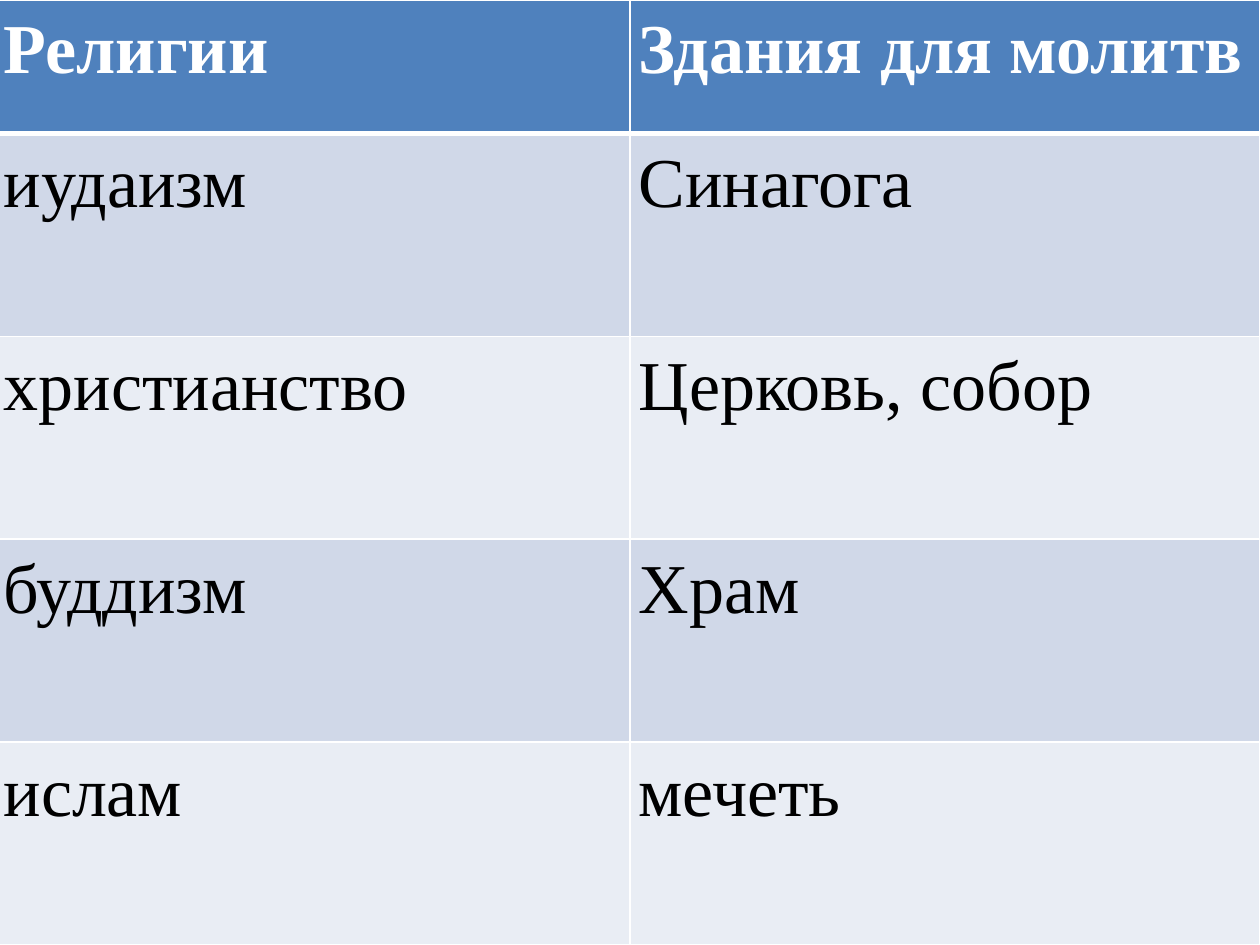
from lxml import etree
from pptx import Presentation
from pptx.dml.color import RGBColor
from pptx.oxml.ns import qn
from pptx.util import Inches, Pt

ROWS = [
    ("Религии", "Здания для молитв"),
    ("иудаизм", "Синагога"),
    ("христианство", "Церковь, собор"),
    ("буддизм", "Храм"),
    ("ислам", "мечеть"),
]
COLORS = {"head": "4F81BD", "odd": "D0D8E8", "even": "E9EDF4",
          "white": "FFFFFF", "black": "000000"}
WIDE, HIGH = 10, 7.5
BLEED = 0.04
COLS = [WIDE / 2 + BLEED, WIDE / 2]
HEAD = 1.06
BODY = (HIGH - HEAD) / (len(ROWS) - 1)
PAD = 0.07
THIN, THICK = 1, 3


def put_text(cell, text, size=40, bold=False, color="black"):
    cell.margin_left = cell.margin_right = Inches(PAD)
    cell.margin_top = cell.margin_bottom = 0
    para = cell.text_frame.paragraphs[0]
    para.line_spacing = 1.15
    para.space_after = Pt(10)
    run = para.add_run()
    run.text = text
    font = run.font
    font.name = "Times New Roman"
    font.size = Pt(size)
    font.bold = bold
    font.color.rgb = RGBColor.from_string(COLORS[color])


def edge(cell, **sides):
    props = cell._tc.get_or_add_tcPr()
    for side, width in sides.items():
        line = etree.SubElement(props, qn("a:ln" + side), w=str(Pt(width)))
        fill = etree.SubElement(line, qn("a:solidFill"))
        etree.SubElement(fill, qn("a:srgbClr"), val=COLORS["white"])


def main():
    deck = Presentation()
    deck.slide_width, deck.slide_height = Inches(WIDE), Inches(HIGH)
    slide = deck.slides.add_slide(deck.slide_layouts[6])
    frame = slide.shapes.add_table(
        len(ROWS), len(COLS), Inches(-BLEED), 0,
        Inches(sum(COLS)), Inches(HIGH))
    table = frame.table
    for col, width in zip(table.columns, COLS):
        col.width = Inches(width)
    for r, texts in enumerate(ROWS):
        head = r == 0
        table.rows[r].height = Inches(HEAD if head else BODY)
        tone = "head" if head else "odd" if r % 2 else "even"
        for c, text in enumerate(texts):
            cell = table.cell(r, c)
            put_text(cell, text, bold=head, color="white" if head else "black")
            edge(cell, L=THIN, R=THIN, T=THICK if r == 1 else THIN,
                 B=THICK if head else THIN)
            cell.fill.solid()
            cell.fill.fore_color.rgb = RGBColor.from_string(COLORS[tone])
    deck.save("out.pptx")


if __name__ == "__main__":
    main()
